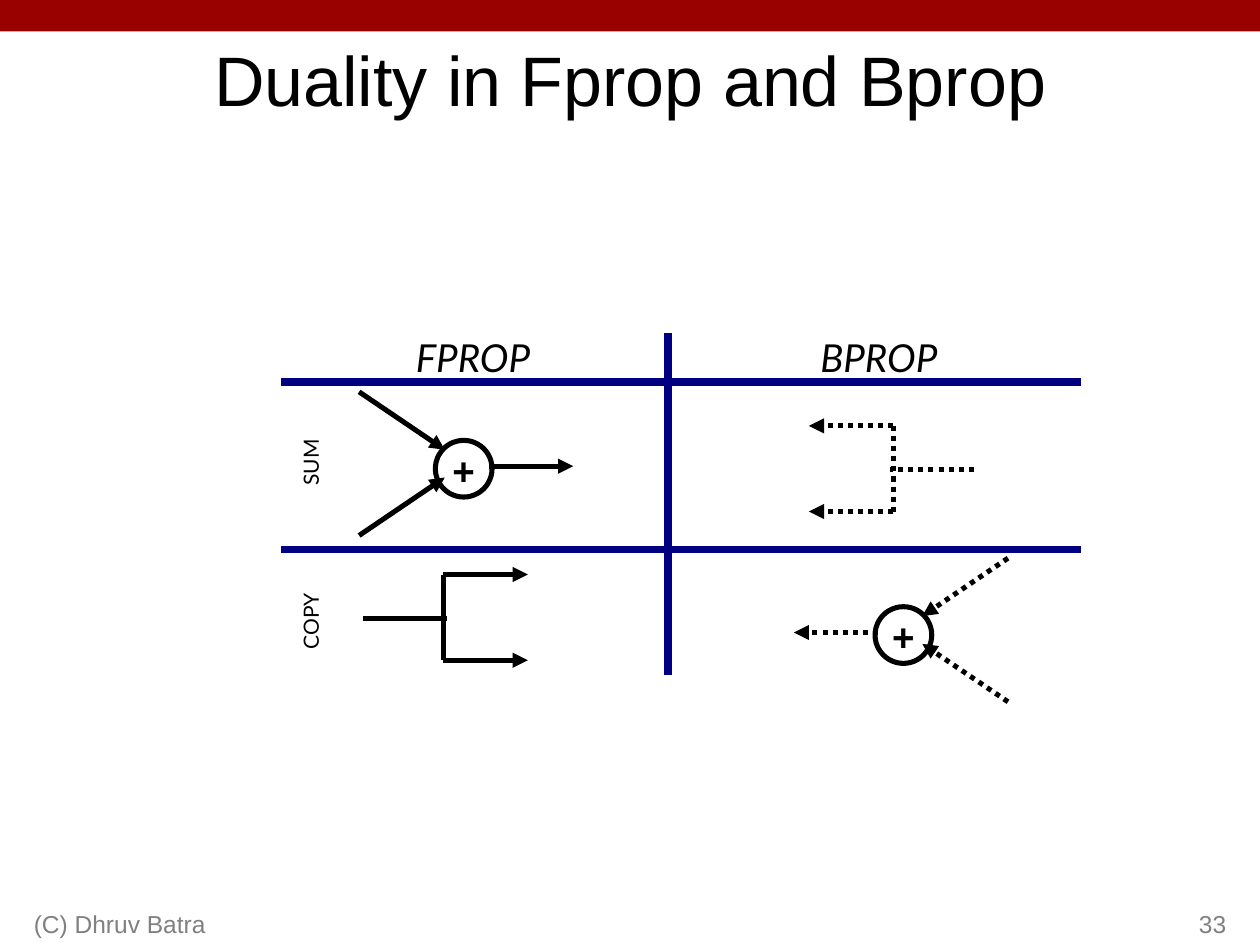
from dataclasses import dataclass

import pptx
import pptx.dml.color
import pptx.enum.dml
import pptx.enum.shapes
import pptx.enum.text
import pptx.oxml.ns
import pptx.util
from lxml import etree

Inches = pptx.util.Inches
Pt = pptx.util.Pt
ALIGN = pptx.enum.text.PP_ALIGN
ANCHOR = pptx.enum.text.MSO_ANCHOR
SHAPE = pptx.enum.shapes.MSO_SHAPE
BLACK, NAVY, GRAY, RED = "000000", "000080", "808080", "990000"
THIN, THICK = 2.89, 4.31


@dataclass
class Label:
    text: str
    left: float
    top: float
    width: float
    height: float
    size: float
    font: str = "Lato"
    color: str = BLACK
    italic: bool = False
    align: ALIGN = ALIGN.CENTER
    anchor: ANCHOR = ANCHOR.TOP
    turn: float = 0
    inset: tuple = (0.09, 0.06, 0.09, 0.04)


@dataclass
class Part:
    """Symbol placed at x, y; way is 1 for left to right, -1 for the mirror."""
    x: float
    y: float
    way: int
    dotted: bool


LABELS = [
    Label("FPROP", 3.07, 2.58, 1.37, 0.76, 22, italic=True, inset=(0.09, 0.07, 0.09, 0.04)),
    Label("BPROP", 6.28, 2.58, 1.39, 0.48, 22, italic=True, inset=(0.09, 0.07, 0.09, 0.04)),
    Label("SUM", 2.02, 3.5, 0.91, 0.34, 12, turn=270),
    Label("COPY", 2.15, 4.63, 0.91, 0.6, 12, turn=270),
    Label("(C) Dhruv Batra", 0.17, 7, 3.17, 0.5, 14, "Arial", GRAY,
          align=ALIGN.LEFT, anchor=ANCHOR.BOTTOM, inset=(0.1, 0.05, 0.1, 0.05)),
    Label("33", 7.75, 7, 2.08, 0.5, 14, "Arial", GRAY,
          align=ALIGN.RIGHT, anchor=ANCHOR.BOTTOM, inset=(0.1, 0.05, 0.1, 0.05)),
]
RULES = [
    ((2.23, 3.03), (8.58, 3.03)),
    ((2.23, 4.36), (8.58, 4.36)),
    ((5.3, 5.36), (5.3, 2.64)),
]
SUMS = [Part(3.68, 3.72, 1, False), Part(7.17, 5.04, -1, True)]
FORKS = [Part(3.52, 4.56, 1, False), Part(7.09, 3.38, -1, True)]


def rgb(code: str) -> pptx.dml.color.RGBColor:
    return pptx.dml.color.RGBColor.from_string(code)


def style(frame, text: str, size: float, font: str, color: str, align) -> None:
    frame.text = text
    para = frame.paragraphs[0]
    para.alignment = align
    face = para.runs[0].font
    face.size, face.name = Pt(size), font
    face.color.rgb = rgb(color)


def pad(frame, inset: tuple) -> None:
    (frame.margin_left, frame.margin_top,
     frame.margin_right, frame.margin_bottom) = map(Inches, inset)


def draw_label(slide, label: Label) -> None:
    box = slide.shapes.add_textbox(Inches(label.left), Inches(label.top),
                                   Inches(label.width), Inches(label.height))
    box.rotation = label.turn
    frame = box.text_frame
    frame.word_wrap = True
    frame.vertical_anchor = label.anchor
    pad(frame, label.inset)
    style(frame, label.text, label.size, label.font, label.color, label.align)
    frame.paragraphs[0].runs[0].font.italic = label.italic


def draw_line(slide, start: tuple, end: tuple, color: str = BLACK, width: float = THIN,
              dotted: bool = False, arrow: bool = False) -> None:
    link = slide.shapes.add_connector(pptx.enum.shapes.MSO_CONNECTOR.STRAIGHT,
                                      *map(Inches, start + end))
    link.line.color.rgb = rgb(color)
    link.line.width = Pt(width)
    if dotted:
        link.line.dash_style = pptx.enum.dml.MSO_LINE.ROUND_DOT
    qn = pptx.oxml.ns.qn
    if arrow:
        etree.SubElement(link.line._get_or_add_ln(), qn("a:tailEnd"), type="triangle")
    etree.SubElement(link._element.spPr, qn("a:effectLst"))


def draw_part(slide, part: Part, strokes: list) -> None:
    """Draw strokes (x1, y1, x2, y2, arrow) measured from the part's place."""
    for x1, y1, x2, y2, arrow in strokes:
        draw_line(slide, (part.x + part.way * x1, part.y + y1),
                  (part.x + part.way * x2, part.y + y2),
                  dotted=part.dotted, arrow=arrow)


def draw_sum(slide, part: Part) -> None:
    size = 0.45
    node = slide.shapes.add_shape(SHAPE.OVAL, Inches(part.x - size / 2),
                                  Inches(part.y - size / 2), Inches(size), Inches(size))
    node.shadow.inherit = False
    node.fill.background()
    node.line.color.rgb = rgb(BLACK)
    node.line.width = Pt(THIN)
    frame = node.text_frame
    frame.word_wrap = False
    frame.vertical_anchor = ANCHOR.MIDDLE
    pad(frame, (0.11, 0.08, 0.11, 0.06))
    style(frame, "+", 22, "Arial", BLACK, ALIGN.CENTER)
    frame.paragraphs[0].runs[0].font.bold = True
    draw_part(slide, part, [
        (-0.83, -0.61, -0.15, -0.15, True),
        (-0.83, 0.53, -0.15, 0.07, True),
        (0.2, -0.02, 0.87, -0.02, True),
    ])


def draw_fork(slide, part: Part) -> None:
    draw_part(slide, part, [
        (0, 0, 0.67, 0, True),
        (0, 0.68, 0.67, 0.68, True),
        (0, 0, 0, 0.68, False),
        (-0.64, 0.35, 0.03, 0.35, False),
    ])


def main() -> None:
    deck = pptx.Presentation()
    deck.slide_width, deck.slide_height = Inches(10), Inches(7.5)
    slide = deck.slides.add_slide(deck.slide_layouts[5])

    band = slide.shapes.add_shape(SHAPE.RECTANGLE, 0, 0, Inches(10), Inches(0.25))
    band.shadow.inherit = False
    band.fill.solid()
    band.fill.fore_color.rgb = rgb(RED)
    band.line.fill.background()

    title = slide.shapes.title
    title.left, title.top = Inches(0.75), Inches(0.25)
    title.width, title.height = Inches(8.5), Inches(0.75)
    title.text_frame.vertical_anchor = ANCHOR.MIDDLE
    style(title.text_frame, "Duality in Fprop and Bprop", 40, "Arial", BLACK, ALIGN.CENTER)

    for part in SUMS:
        draw_sum(slide, part)
    for part in FORKS:
        draw_fork(slide, part)
    for start, end in RULES:
        draw_line(slide, start, end, NAVY, THICK)
    for label in LABELS:
        draw_label(slide, label)
    deck.save("out.pptx")


if __name__ == "__main__":
    main()
